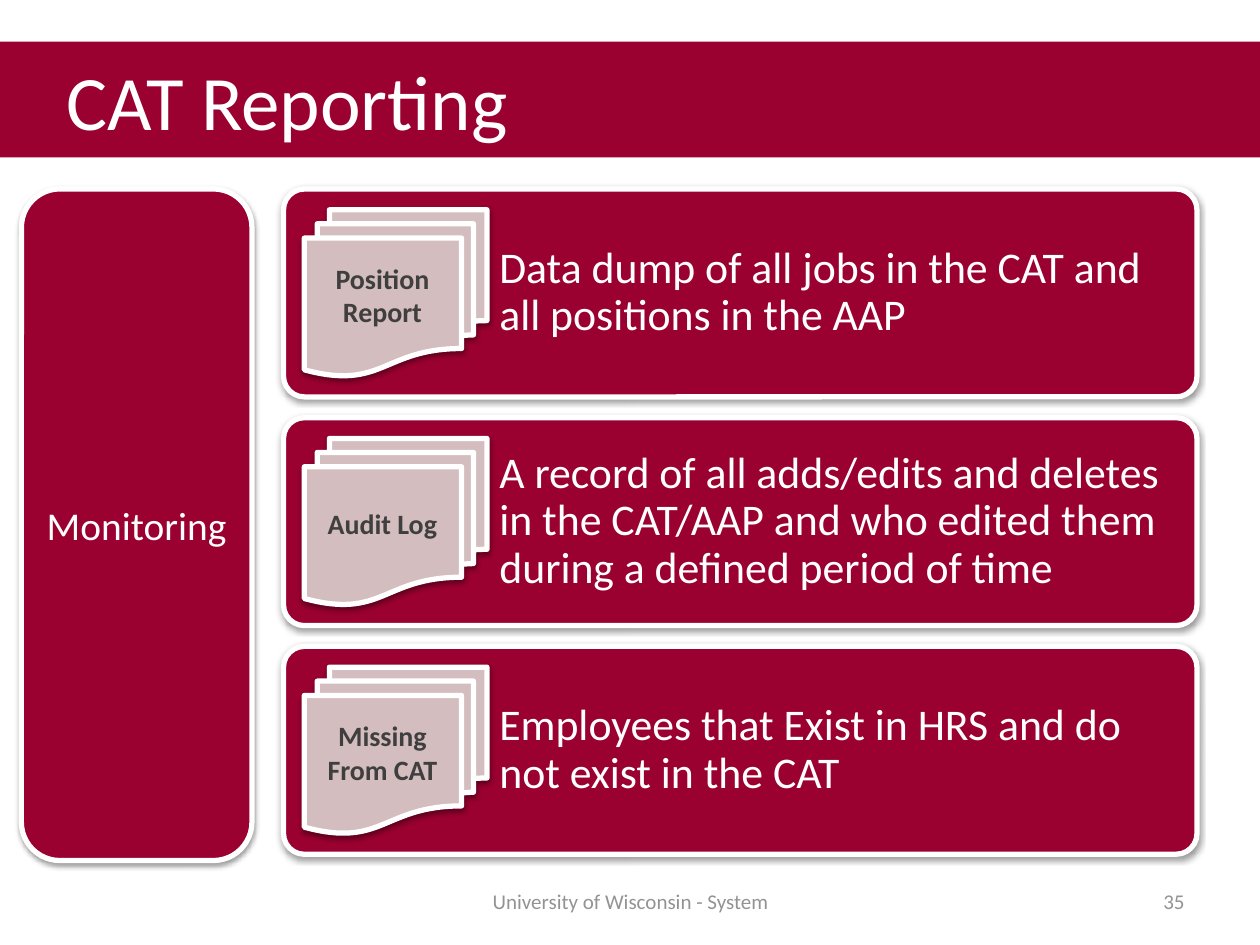
from lxml.etree import SubElement
from pptx import Presentation
from pptx.dml.color import RGBColor
from pptx.enum.shapes import MSO_SHAPE
from pptx.enum.text import MSO_ANCHOR, PP_ALIGN
from pptx.oxml.ns import qn
from pptx.util import Inches, Pt

TITLE = "CAT Reporting"
TOPIC = "Monitoring"
REPORTS = [
    ("Position Report", "Data dump of all jobs in the CAT and all positions in the AAP"),
    ("Audit Log", "A record of all adds/edits and deletes in the CAT/AAP "
                  "and who edited them during a defined period of time"),
    ("Missing From CAT", "Employees that Exist in HRS and do not exist in the CAT"),
]
FOOTER = "University of Wisconsin - System"
PAGE_NUMBER = "35"

FONT = "Calibri"
CRIMSON = RGBColor(0x9A, 0x00, 0x30)
ROSE = RGBColor(0xD4, 0xBD, 0xBE)
WHITE = RGBColor(0xFF, 0xFF, 0xFF)
CHARCOAL = RGBColor(0x3F, 0x3F, 0x3F)
GRAY = RGBColor(0x93, 0x93, 0x93)

WIDTH, HEIGHT = 10, 7.5
TOP = 1.5
CARD_LEFT, CARD_WIDTH, CARD_HEIGHT = 2.25, 7.25, 1.65
PITCH = CARD_HEIGHT * 1.1
PAD = CARD_HEIGHT / 10
ICON_WIDTH = CARD_WIDTH / 5
ICON_HEIGHT = CARD_HEIGHT - 2 * PAD
FOOTER_TOP, FOOTER_HEIGHT = 6.95, 0.4


def add_shadow(shape):
    """Give a shape a soft shadow below it."""
    shape.shadow.inherit = False
    effects = shape._element.spPr.find(qn("a:effectLst"))
    shadow = SubElement(effects, qn("a:outerShdw"), blurRad="40000", dist="20000",
                        dir="5400000", rotWithShape="0")
    color = SubElement(shadow, qn("a:srgbClr"), val="000000")
    SubElement(color, qn("a:alpha"), val="38000")


def add_panel(slide, kind, box, fill, outlined=True):
    """Add a filled shape, with a white outline and shadow if outlined."""
    panel = slide.shapes.add_shape(kind, *map(Inches, box))
    panel.fill.solid()
    panel.fill.fore_color.rgb = fill
    if outlined:
        panel.line.color.rgb = WHITE
        panel.line.width = Pt(3)
        add_shadow(panel)
    else:
        panel.line.fill.background()
        panel.shadow.inherit = False
    return panel


def write(shape, text, size, color, align=PP_ALIGN.LEFT, bold=False):
    """Set and format the text of a shape, centred vertically."""
    frame = shape.text_frame
    frame.text = text
    frame.word_wrap = True
    frame.vertical_anchor = MSO_ANCHOR.MIDDLE
    paragraph = frame.paragraphs[0]
    paragraph.alignment = align
    font = paragraph.runs[0].font
    font.name, font.size, font.bold = FONT, Pt(size), bold
    font.color.rgb = color
    return frame


def add_text(slide, box, *style, **options):
    """Add a text box and return its text frame."""
    return write(slide.shapes.add_textbox(*map(Inches, box)), *style, **options)


def add_report(slide, row, name, description):
    """Add one card with its document icon, label and description."""
    top = TOP + row * PITCH
    card = add_panel(slide, MSO_SHAPE.ROUNDED_RECTANGLE,
                     (CARD_LEFT, top, CARD_WIDTH, CARD_HEIGHT), CRIMSON)
    card.adjustments[0] = 0.1

    icon_left = CARD_LEFT + PAD
    text_left = icon_left + ICON_WIDTH
    details = add_text(slide, (text_left, top, CARD_LEFT + CARD_WIDTH - text_left, CARD_HEIGHT),
                       description, 25, WHITE)
    details.margin_top = details.margin_bottom = Inches(0.1)
    details.paragraphs[0].line_spacing = 0.9

    add_panel(slide, MSO_SHAPE.FLOWCHART_MULTIDOCUMENT,
              (icon_left, top + PAD, ICON_WIDTH, ICON_HEIGHT), ROSE)
    add_text(slide, (icon_left - 0.09, top + 0.52, 1.42, 0.64), name, 16, CHARCOAL,
             align=PP_ALIGN.CENTER, bold=True)


def main():
    """Build the reporting slide."""
    deck = Presentation()
    deck.slide_width, deck.slide_height = Inches(WIDTH), Inches(HEIGHT)
    slide = deck.slides.add_slide(deck.slide_layouts[6])

    banner = add_panel(slide, MSO_SHAPE.RECTANGLE, (0, 0.33, WIDTH, 0.92), CRIMSON, outlined=False)
    write(banner, TITLE, 44, WHITE).margin_left = Inches(0.53)

    for row, (name, description) in enumerate(REPORTS):
        add_report(slide, row, name, description)

    topic = add_panel(slide, MSO_SHAPE.ROUNDED_RECTANGLE, (0.17, TOP, 1.83, 5.33), CRIMSON)
    topic_frame = write(topic, TOPIC, 22.5, WHITE, align=PP_ALIGN.CENTER)
    topic_frame.margin_left = topic_frame.margin_right = Inches(0.05)

    add_text(slide, (3.42, FOOTER_TOP, 3.17, FOOTER_HEIGHT), FOOTER, 12, GRAY,
             align=PP_ALIGN.CENTER)
    add_text(slide, (7.17, FOOTER_TOP, 2.33, FOOTER_HEIGHT), PAGE_NUMBER, 12, GRAY,
             align=PP_ALIGN.RIGHT)

    deck.save("out.pptx")


if __name__ == "__main__":
    main()
